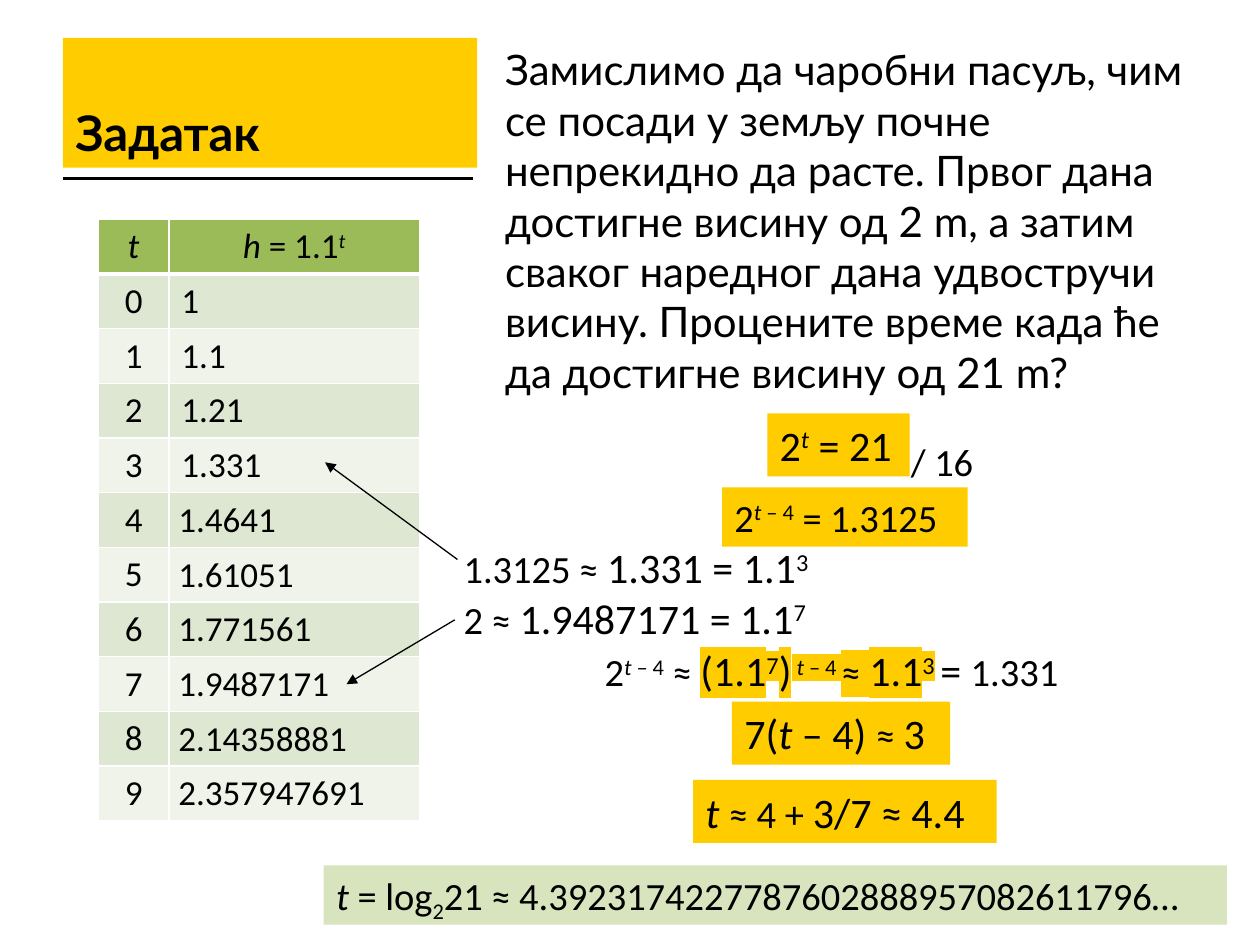
from dataclasses import dataclass

from lxml.etree import SubElement
from pptx import Presentation
from pptx.dml.color import RGBColor
from pptx.enum.shapes import MSO_CONNECTOR as Connector, MSO_SHAPE as Shape
from pptx.enum.text import MSO_ANCHOR as Anchor, PP_ALIGN as Align
from pptx.oxml.ns import qn
from pptx.util import Pt


@dataclass(frozen=True)
class Theme:
    heading_font: str = "Lato"
    math_font: str = "Calibri"
    black: str = "000000"
    white: str = "FFFFFF"
    yellow: str = "FFCC00"
    pale_green: str = "D7E4BD"
    header_green: str = "9BBB59"
    bands: tuple = ("DEE7D1", "EFF3EA")
    title: int = 28
    large: int = 24
    medium: int = 22
    table: int = 20


@dataclass(frozen=True)
class Part:
    text: str
    size: int = 0
    italic: bool = False
    shift: int = 0
    marked: bool = False


THEME = Theme()
BIG, MID = THEME.large, THEME.medium
SUPER, SUB = 30000, -25000


def rgb(color):
    return RGBColor.from_string(color)


def power(text, size=0, italic=False, marked=False):
    return Part(text, size, italic, SUPER, marked)


def marked(text, size=0):
    return Part(text, size, marked=True)


def add_color(parent, tag, color):
    element = SubElement(parent, qn(tag))
    SubElement(element, qn("a:srgbClr")).set("val", color)
    return element


def write_parts(paragraph, parts, size, font=THEME.math_font, bold=False):
    for part in parts:
        run = paragraph.add_run()
        run.text = part.text
        run.font.size = Pt(part.size or size)
        run.font.bold = bold
        run.font.italic = part.italic
        run.font.color.rgb = rgb(THEME.black)
        properties = run.font._element
        if part.shift:
            properties.set("baseline", str(part.shift))
        if part.marked:
            add_color(properties, "a:highlight", THEME.yellow)
        run.font.name = font


def add_text(slide, box, lines, size, fill=None, font=THEME.math_font, bold=False, anchor=Anchor.TOP):
    lengths = [Pt(length) for length in box]
    if fill:
        shape = slide.shapes.add_shape(Shape.RECTANGLE, *lengths)
        shape.shadow.inherit = False
        shape.fill.solid()
        shape.fill.fore_color.rgb = rgb(fill)
        shape.line.fill.background()
    else:
        shape = slide.shapes.add_textbox(*lengths)
    frame = shape.text_frame
    frame.word_wrap = True
    frame.vertical_anchor = anchor
    for index, parts in enumerate(lines):
        paragraph = frame.add_paragraph() if index else frame.paragraphs[0]
        paragraph.alignment = Align.LEFT
        write_parts(paragraph, parts, size, font, bold)


def add_line(slide, start, end, width, arrow=False):
    points = [Pt(length) for length in (*start, *end)]
    connector = slide.shapes.add_connector(Connector.STRAIGHT, *points)
    connector.line.color.rgb = rgb(THEME.black)
    connector.line.width = Pt(width)
    if arrow:
        SubElement(connector.line._get_or_add_ln(), qn("a:tailEnd")).set("type", "triangle")
    SubElement(connector._element.spPr, qn("a:effectLst"))


def style_cell(cell, fill, top=1, bottom=1):
    cell.vertical_anchor = Anchor.TOP
    properties = cell._tc.get_or_add_tcPr()
    for side, width in zip("LRTB", (1, 1, top, bottom)):
        border = SubElement(properties, qn(f"a:ln{side}"))
        border.set("w", str(Pt(width)))
        add_color(border, "a:solidFill", THEME.white)
    cell.fill.solid()
    cell.fill.fore_color.rgb = rgb(fill)


def add_growth_table(slide, left, top, column_widths, row_height, header, values):
    count = len(values) + 1
    frame = slide.shapes.add_table(
        count, 2, Pt(left), Pt(top), Pt(sum(column_widths)), Pt(row_height * count)
    )
    table = frame.table
    for column, width in zip(table.columns, column_widths):
        column.width = Pt(width)
    for row in table.rows:
        row.height = Pt(row_height)
    for column, parts in enumerate(header):
        cell = table.cell(0, column)
        style_cell(cell, THEME.header_green, bottom=3)
        paragraph = cell.text_frame.paragraphs[0]
        paragraph.alignment = Align.CENTER
        write_parts(paragraph, parts, THEME.table)
    for day, value in enumerate(values):
        for column, text in enumerate((str(day), value)):
            cell = table.cell(day + 1, column)
            style_cell(cell, THEME.bands[day % 2], top=1 if day else 3)
            paragraph = cell.text_frame.paragraphs[0]
            paragraph.alignment = Align.LEFT if column else Align.CENTER
            if column and day > 3:
                cell.margin_left = cell.margin_right = Pt(5.4)
                cell.margin_top = cell.margin_bottom = Pt(0)
                paragraph.alignment = Align.JUSTIFY
                paragraph.line_spacing = 1.15
                paragraph.space_after = Pt(10)
            write_parts(paragraph, [Part(text)], THEME.table)


def main():
    presentation = Presentation()
    presentation.slide_width, presentation.slide_height = Pt(720), Pt(540)
    slide = presentation.slides.add_slide(presentation.slide_layouts[6])
    t = Part("t", italic=True)

    add_line(slide, (36, 102), (270, 102), 1.5)
    add_text(slide, (36, 21.6, 236.7, 74.2), [[Part("Задатак")]], THEME.title,
             THEME.yellow, THEME.heading_font, True, Anchor.BOTTOM)
    task = (
        "Замислимо да чаробни пасуљ, чим се посади у земљу почне непрекидно да расте. "
        "Првог дана достигне висину од 2 m, а затим сваког наредног дана удвостручи висину. "
        "Процените време када ће да достигне висину од 21 m?"
    )
    add_text(slide, (281.5, 21.6, 402.5, 460.8), [[Part(task)]], BIG, font=THEME.heading_font)

    add_text(slide, (438.5, 236.2, 81.4, 36),
             [[Part("2"), power("t", italic=True), Part(" = 21")]], BIG, THEME.yellow)
    add_text(slide, (185, 494.6, 516.2, 33.8),
             [[t, Part(" = log"), Part("2", shift=SUB),
               Part("21 ≈ 4.3923174227787602888957082611796…")]], MID, THEME.pale_green)
    add_growth_table(
        slide, 56.2, 125.3, (40.3, 143.3), 31.2,
        [[t], [Part("h", italic=True), Part(" = 1.1"), power("t", italic=True)]],
        ["1", "1.1", "1.21", "1.331", "1.4641", "1.61051", "1.771561",
         "1.9487171", "2.14358881", "2.357947691"],
    )

    exponent = [Part("2"), power("t ", italic=True), power("– 4")]
    add_text(slide, (412.6, 278.6, 140.4, 33.8), [exponent + [Part(" = 1.3125")]], MID, THEME.yellow)
    add_text(slide, (513.4, 247, 62.6, 33.8), [[Part("/ 16")]], MID)
    add_text(slide, (257.8, 306, 236.9, 65.5), [
        [Part("1.3125 ≈ "), Part("1.331 = 1.1", BIG), power("3", BIG)],
        [Part("2 ≈ "), Part("1.9487171 = 1.1", BIG), power("7", BIG)],
    ], MID)
    add_text(slide, (338.4, 365, 288.7, 36), [exponent + [
        Part(" ≈ "), marked("(1.1", BIG), power("7", BIG, marked=True), marked(")", BIG),
        power(" t ", italic=True, marked=True), power("– 4", marked=True),
        power(" ", italic=True, marked=True), marked("≈ "), marked("1.1", BIG),
        power("3", BIG, marked=True), power(" ", BIG), Part("= ", BIG), Part("1.331"),
    ]], MID)
    add_line(slide, (261.4, 319.7), (185.8, 264.2), 0.75, arrow=True)
    add_line(slide, (259.9, 354.2), (198, 391), 0.75, arrow=True)

    add_text(slide, (418.3, 401, 124.6, 36),
             [[Part("7("), Part("t ", italic=True), Part("– 4) "), marked("≈ ", MID), marked("3")]],
             BIG, THEME.yellow)
    add_text(slide, (396, 445.7, 173.5, 36),
             [[Part("t ", italic=True), marked("≈ 4 + ", MID), marked("3/7 ≈ 4.4")]],
             BIG, THEME.yellow)
    presentation.save("out.pptx")


if __name__ == "__main__":
    main()
